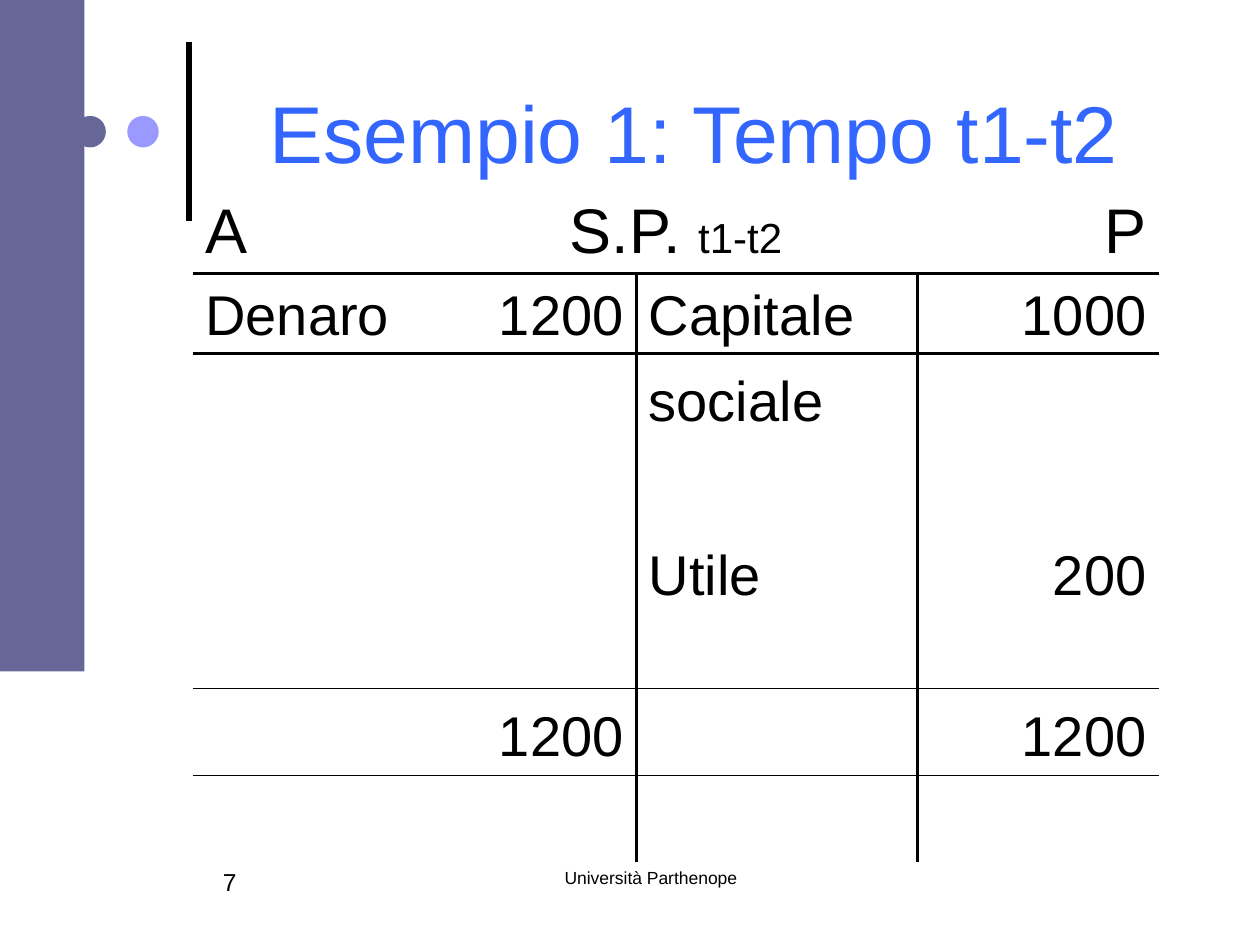
from dataclasses import dataclass

from lxml.etree import SubElement
from pptx import Presentation
from pptx.dml.color import RGBColor
from pptx.enum.shapes import MSO_CONNECTOR, MSO_SHAPE
from pptx.enum.text import MSO_ANCHOR, PP_ALIGN
from pptx.oxml.ns import qn
from pptx.util import Inches, Pt


@dataclass(frozen=True)
class Theme:
    font: str = "Arial"
    black: str = "000000"
    title_blue: str = "3366FF"
    slate: str = "666699"
    lavender: str = "9999FF"
    title_size: int = 46
    heading_size: int = 36
    period_size: int = 24
    entry_size: int = 32
    number_size: int = 14
    footer_size: int = 10


THEME = Theme()
COLUMN_WIDTHS = [1.92, 1.6, 2.23, 1.92]
ROW_HEIGHTS = [0.66, 0.61, 0.69, 0.69, 0.69, 0.59, 0.69, 0.69]
# Account entries by row: assets, amount, liabilities, amount
ENTRIES = {
    1: ["Denaro", "1200", "Capitale", "1000"],
    2: ["", "", "sociale", ""],
    4: ["", "", "Utile", "200"],
    6: ["", "1200", "", "1200"],
}
HEADER_ROW, LAST_ENTRY_ROW = 0, 5


def box(left, top, width, height):
    return [Inches(length) for length in (left, top, width, height)]


def write(paragraph, text, size, color=THEME.black, align=PP_ALIGN.LEFT):
    paragraph.alignment = align
    run = paragraph.add_run()
    run.text = text
    run.font.name = THEME.font
    run.font.size = Pt(size)
    run.font.color.rgb = RGBColor.from_string(color)


def add_filled_shape(slide, kind, place, color):
    shape = slide.shapes.add_shape(kind, *box(*place))
    shape.shadow.inherit = False
    shape.fill.solid()
    shape.fill.fore_color.rgb = RGBColor.from_string(color)
    shape.line.fill.background()


def add_label(slide, place, text, size, align=PP_ALIGN.LEFT):
    frame = slide.shapes.add_textbox(*box(*place)).text_frame
    frame.word_wrap = True
    write(frame.paragraphs[0], text, size, align=align)


def add_decoration(slide):
    connector = slide.shapes.add_connector(
        MSO_CONNECTOR.STRAIGHT, Inches(1.5), Inches(0.33), Inches(1.5), Inches(1.75))
    connector.line.width = Pt(3)
    connector.line.color.rgb = RGBColor.from_string(THEME.black)
    SubElement(connector._element.spPr, qn("a:effectLst"))
    for left, color in ((0.59, THEME.slate), (1.01, THEME.lavender)):
        add_filled_shape(slide, MSO_SHAPE.OVAL, (left, 0.92, 0.25, 0.25), color)
    add_filled_shape(slide, MSO_SHAPE.RECTANGLE, (0, 0, 0.67, 5.33), THEME.slate)


def set_title(slide, text):
    title = slide.shapes.title
    title.left, title.top, title.width, title.height = box(1.67, 0.21, 7.67, 1.67)
    title.text_frame.vertical_anchor = MSO_ANCHOR.MIDDLE
    write(title.text_frame.paragraphs[0], text, THEME.title_size,
          color=THEME.title_blue, align=PP_ALIGN.CENTER)


def set_borders(cell, widths):
    properties = cell._tc.get_or_add_tcPr()
    for side in "LRTB":
        if side in widths:
            line = SubElement(properties, qn(f"a:ln{side}"), w=str(Pt(widths[side])))
            fill = SubElement(line, qn("a:solidFill"))
            SubElement(fill, qn("a:srgbClr"), val=THEME.black)


def account_borders(row, column):
    """The T of the account, and the thin rule above the totals."""
    widths = {}
    if row == HEADER_ROW:
        return {"B": 2}
    if column in (1, 2):
        widths["R" if column == 1 else "L"] = 2
    if row == HEADER_ROW + 1:
        widths["T"] = 2
    if row == LAST_ENTRY_ROW:
        widths["B"] = 1
    if row == LAST_ENTRY_ROW + 1:
        widths["T"] = 1
    return widths


def add_account_table(slide):
    frame = slide.shapes.add_table(
        len(ROW_HEIGHTS), len(COLUMN_WIDTHS),
        *box(1.53, 1.47, sum(COLUMN_WIDTHS), sum(ROW_HEIGHTS)))
    table = frame.table
    table.first_row = table.horz_banding = False
    # "No style, no grid" leaves only the borders set here
    table._tbl.tblPr.find(qn("a:tableStyleId")).text = "{2D5ABB26-0587-4C30-8999-92F81FD0307C}"
    for column, width in zip(table.columns, COLUMN_WIDTHS):
        column.width = Inches(width)
    for row, height in zip(table.rows, ROW_HEIGHTS):
        row.height = Inches(height)

    for row in range(len(ROW_HEIGHTS)):
        for column in range(len(COLUMN_WIDTHS)):
            cell = table.cell(row, column)
            set_borders(cell, account_borders(row, column))
            cell.fill.background()
            cell.vertical_anchor = MSO_ANCHOR.BOTTOM
            text = ENTRIES.get(row, [""] * 4)[column]
            if text:
                write(cell.text_frame.paragraphs[0], text, THEME.entry_size,
                      align=PP_ALIGN.RIGHT if column % 2 else PP_ALIGN.LEFT)

    # Heading: assets, name and period of the account, liabilities
    table.cell(0, 1).merge(table.cell(0, 2))
    headings = [
        (0, "A", THEME.heading_size, PP_ALIGN.LEFT),
        (1, "S.P. ", THEME.heading_size, PP_ALIGN.CENTER),
        (1, "t1-t2", THEME.period_size, PP_ALIGN.CENTER),
        (3, "P", THEME.heading_size, PP_ALIGN.RIGHT),
    ]
    for column, text, size, align in headings:
        write(table.cell(0, column).text_frame.paragraphs[0], text, size, align=align)


def main():
    presentation = Presentation()
    presentation.slide_width, presentation.slide_height = Inches(10), Inches(7.5)
    slide = presentation.slides.add_slide(presentation.slide_layouts[5])

    # Side band, dots and rule
    add_decoration(slide)

    # Footer and slide number
    add_label(slide, (3.58, 6.83, 3.17, 0.5), "Università Parthenope",
              THEME.footer_size, align=PP_ALIGN.CENTER)
    add_label(slide, (1.67, 6.83, 1.42, 0.5), "7", THEME.number_size)

    # Title and balance sheet
    set_title(slide, "Esempio 1: Tempo t1-t2")
    add_account_table(slide)

    presentation.save("out.pptx")


if __name__ == "__main__":
    main()
